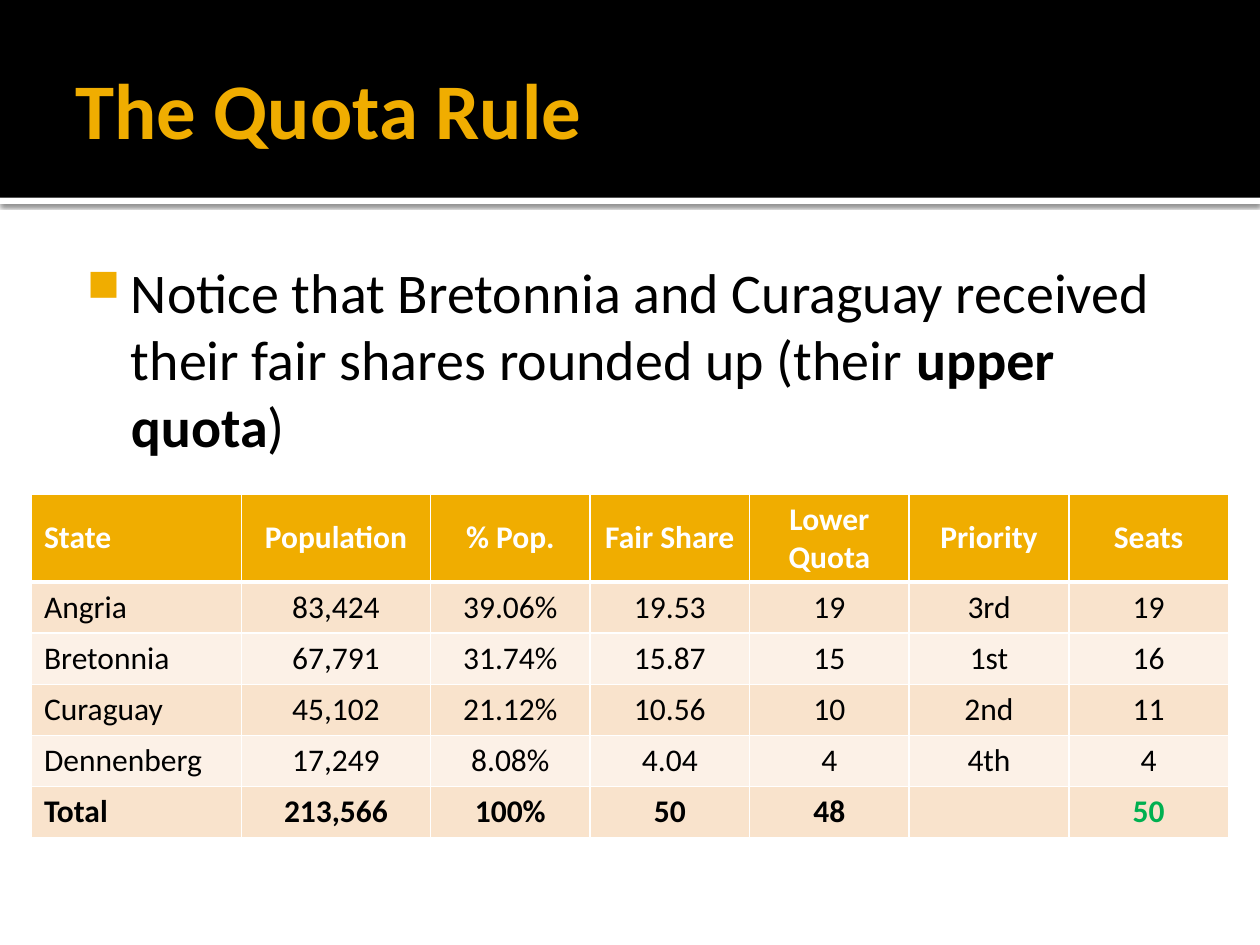
import pptx
import pptx.util
import pptx.dml.color
import pptx.enum.shapes
import pptx.enum.text
import pptx.oxml
import pptx.oxml.ns
from lxml import etree

Pt = pptx.util.Pt
ANCHOR = pptx.enum.text.MSO_ANCHOR
ALIGN = pptx.enum.text.PP_ALIGN
FONT = "Calibri"
GOLD, WHITE, BLACK, GREEN = "F0AD00", "FFFFFF", "000000", "00B050"
BANDS = ["F9E3CC", "FCF1E7"]

TITLE = "The Quota Rule"
BODY = [
    ("Notice that Bretonnia and Curaguay received their fair shares rounded up (their ", False),
    ("upper quota", True),
    (")", False),
]
ROWS = [
    ["State", "Population", "% Pop.", "Fair Share", "Lower Quota", "Priority", "Seats"],
    ["Angria", "83,424", "39.06%", "19.53", "19", "3rd", "19"],
    ["Bretonnia", "67,791", "31.74%", "15.87", "15", "1st", "16"],
    ["Curaguay", "45,102", "21.12%", "10.56", "10", "2nd", "11"],
    ["Dennenberg", "17,249", "8.08%", "4.04", "4", "4th", "4"],
    ["Total", "213,566", "100%", "50", "48", "", "50"],
]
COL_WIDTHS = [120, 108] + [91.2] * 5
ROW_HEIGHTS = [50.4] + [29.2] * 5


def rgb(color):
    return pptx.dml.color.RGBColor.from_string(color)


def add_xml(parent, xml):
    ns = pptx.oxml.ns.nsdecls("a")
    parent.append(pptx.oxml.parse_xml(xml.replace(">", f" {ns}>", 1)))


def style(font, size, color, bold=False):
    font.name, font.size, font.bold = FONT, Pt(size), bold
    font.color.rgb = rgb(color)


def add_band(s, top, height, color):
    sp = s.shapes.add_shape(pptx.enum.shapes.MSO_SHAPE.RECTANGLE, 0, Pt(top), Pt(720), Pt(height))
    sp.shadow.inherit = False
    sp.fill.solid()
    sp.fill.fore_color.rgb = rgb(color)
    sp.line.fill.background()
    return sp


def add_text(s, box, insets, anchor):
    tf = s.shapes.add_textbox(*map(Pt, box)).text_frame
    tf.word_wrap = True
    tf.vertical_anchor = anchor
    tf.margin_left, tf.margin_top, tf.margin_right, tf.margin_bottom = map(Pt, insets)
    return tf.paragraphs[0]


def add_borders(cell, bottom):
    tcPr = cell._tc.get_or_add_tcPr()
    for i, (side, width) in enumerate([("L", 1), ("R", 1), ("T", 1), ("B", bottom)]):
        ln = pptx.oxml.parse_xml(
            f'<a:ln{side} {pptx.oxml.ns.nsdecls("a")} w="{Pt(width)}"><a:solidFill>'
            f'<a:srgbClr val="{WHITE}"/></a:solidFill></a:ln{side}>')
        tcPr.insert(i, ln)


prs = pptx.Presentation()
prs.slide_width, prs.slide_height = Pt(720), Pt(540)
s = prs.slides.add_slide(prs.slide_layouts[6])

rule = add_band(s, 113, 3.6, WHITE)
effects = rule._element.spPr.find(pptx.oxml.ns.qn("a:effectLst"))
add_xml(effects, f'<a:outerShdw blurRad="{Pt(2.5)}" dist="{Pt(0.8)}" dir="5400000" rotWithShape="0">'
        f'<a:srgbClr val="{BLACK}"><a:alpha val="60000"/></a:srgbClr></a:outerShdw>')
add_band(s, 0, 113, BLACK)

p = add_text(s, (36, 12.24, 648, 98.64), (7.2, 3.6, 3.6, 3.6), ANCHOR.MIDDLE)
p.text = TITLE
style(p.font, 45, GOLD, True)

p = add_text(s, (36, 139.7, 648, 364.3), (4.3, 7.2, 7.2, 3.6), ANCHOR.TOP)
for text, bold in BODY:
    r = p.add_run()
    r.text = text
    style(r.font, 32, BLACK, bold)
pPr = p._p.get_or_add_pPr()
pPr.set("marL", str(Pt(34.56)))
pPr.set("indent", str(-Pt(25.2)))
add_xml(pPr, f'<a:buClr><a:srgbClr val="{GOLD}"/></a:buClr>')
for xml in ['<a:buSzPct val="80000"></a:buSzPct>', '<a:buChar char="■"></a:buChar>']:
    add_xml(pPr, xml)

table = s.shapes.add_table(len(ROWS), len(COL_WIDTHS), Pt(18), Pt(282.2),
                           Pt(sum(COL_WIDTHS)), Pt(sum(ROW_HEIGHTS))).table
for col, width in zip(table.columns, COL_WIDTHS):
    col.width = Pt(width)
for i, (row, height) in enumerate(zip(ROWS, ROW_HEIGHTS)):
    table.rows[i].height = Pt(height)
    header, total = i == 0, i == len(ROWS) - 1
    for j, text in enumerate(row):
        cell = table.cell(i, j)
        cell.fill.solid()
        cell.fill.fore_color.rgb = rgb(GOLD if header else BANDS[(i - 1) % 2])
        cell.vertical_anchor = ANCHOR.MIDDLE if header or j > 1 else ANCHOR.TOP
        add_borders(cell, 3 if header else 1)
        p = cell.text_frame.paragraphs[0]
        p.text = text
        p.alignment = ALIGN.CENTER if j else ALIGN.LEFT
        color = WHITE if header else GREEN if total and j == len(row) - 1 else BLACK
        style(p.font, 18, color, header or total)

prs.save("out.pptx")
